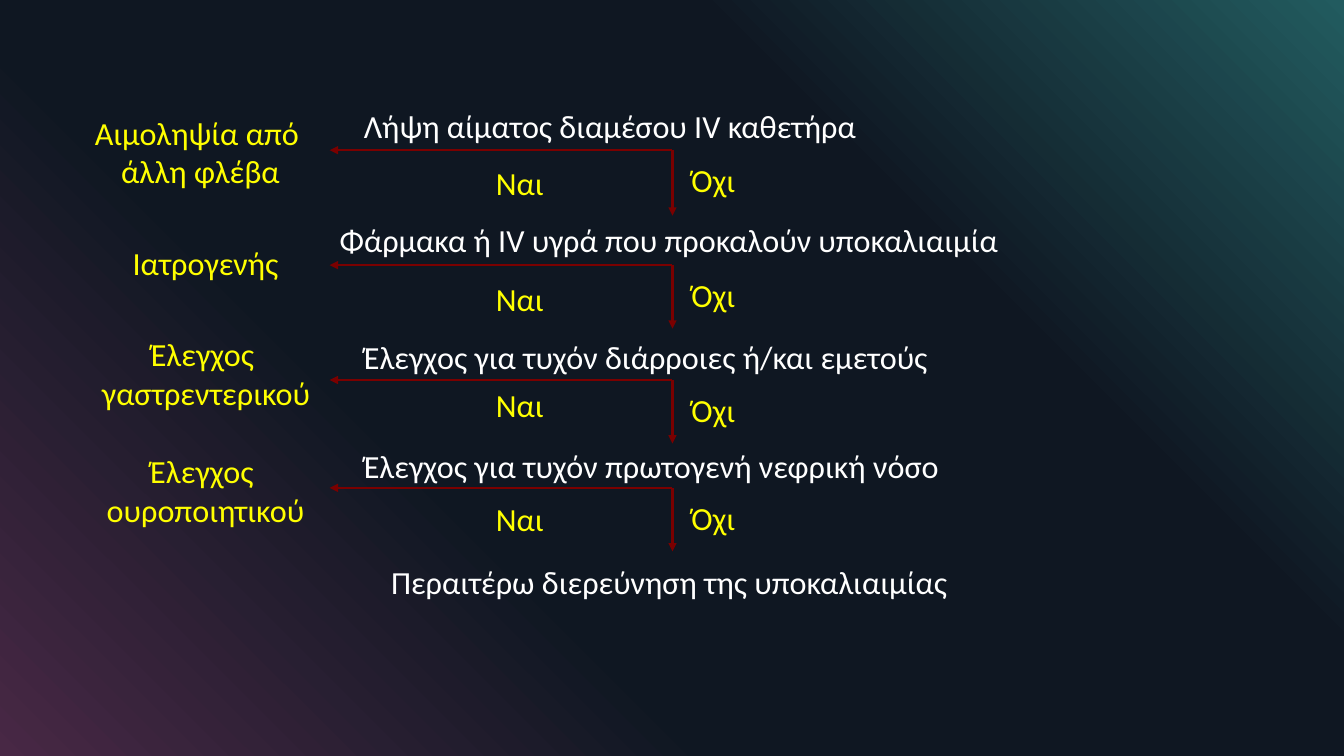
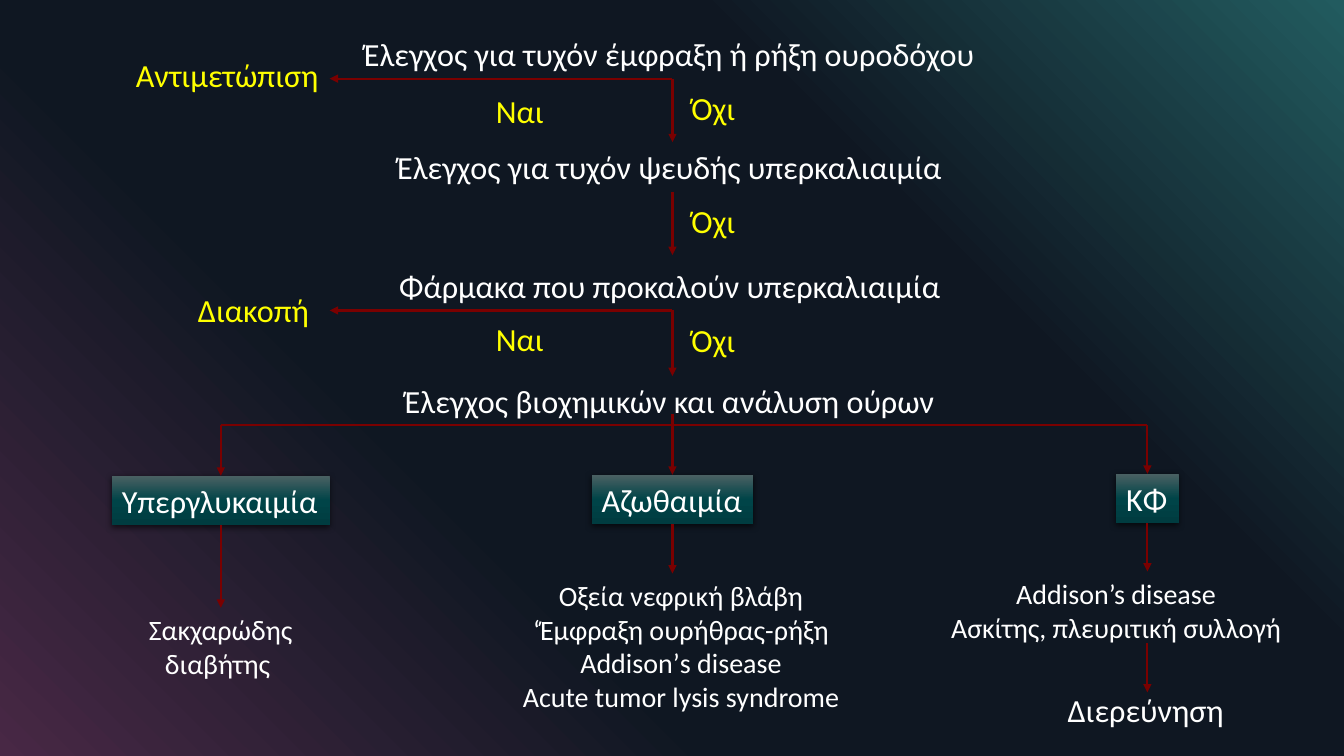
from dataclasses import dataclass

import pptx
import pptx.dml.color
import pptx.enum.shapes
import pptx.enum.text
import pptx.oxml
import pptx.oxml.ns
import pptx.util
from lxml import etree

Inches = pptx.util.Inches
qn = pptx.oxml.ns.qn


@dataclass(frozen=True)
class Theme:
    font: str = "Calibri"
    size: int = 23
    small: int = 20
    rule: float = 1.5
    white: str = "FFFFFF"
    yellow: str = "FFFF00"
    red: str = "7A0000"
    black: str = "000000"
    back: tuple = ((0, "482845"), (34, "0F1722"), (69, "0F1722"), (100, "225B5F"))
    teal: tuple = ((0, "4B6163"), (50, "004448"), (100, "003C40"))


THEME = Theme()
MID = 6.67
LEFT = 3.27
DROP = 0.63
NEAR = 0.03


def blend(fill, root, stops, angle):
    fill.gradient()
    fill.gradient_angle = angle
    group = root.find(".//" + qn("a:gsLst"))
    for old in list(group):
        group.remove(old)
    for place, tint in stops:
        stop = etree.SubElement(group, qn("a:gs"), pos=str(place * 1000))
        etree.SubElement(stop, qn("a:srgbClr"), val=tint)


class Deck:
    def __init__(self, theme):
        self.theme = theme
        self.show = pptx.Presentation()
        self.show.slide_width = Inches(13.33)
        self.show.slide_height = Inches(7.5)
        master = self.show.slide_master
        blend(master.background.fill, master.element, theme.back, 45)

    def page(self):
        self.slide = self.show.slides.add_slide(self.show.slide_layouts[6])
        self.boxes = []

    def letter(self, shape, text, size, tint, center):
        frame = shape.text_frame
        frame.text = text
        frame.word_wrap = False
        frame.auto_size = pptx.enum.text.MSO_AUTO_SIZE.SHAPE_TO_FIT_TEXT
        align = pptx.enum.text.PP_ALIGN
        for para in frame.paragraphs:
            para.alignment = align.CENTER if center else align.LEFT
            para.font.name = self.theme.font
            para.font.size = pptx.util.Pt(size)
            para.font.color.rgb = pptx.dml.color.RGBColor.from_string(tint)
        self.boxes.append(shape)

    def frame(self, text, left, top, width, size):
        lines = 1 + text.count("\n") + text.count("\v")
        height = round(0.1 + lines * size * 1.22 / 72, 2)
        return [Inches(n) for n in (left, top, width, height)]

    def label(self, text, left, top, width, tint=None, size=None, center=False):
        size = size or self.theme.size
        shape = self.slide.shapes.add_textbox(*self.frame(text, left, top, width, size))
        self.letter(shape, text, size, tint or self.theme.white, center)

    def middle(self, text, top, width):
        self.label(text, MID - width / 2, top, width)

    def answer(self, text, left, top, width):
        self.label(text, left, top, width, self.theme.yellow, center=True)

    def box(self, text, x, top, width):
        theme = self.theme
        shape = self.slide.shapes.add_shape(
            pptx.enum.shapes.MSO_SHAPE.RECTANGLE,
            *self.frame(text, x - width / 2, top, width, theme.size))
        blend(shape.fill, shape.element, theme.teal, 270)
        shape.line.fill.background()
        shape.shadow.inherit = False
        effects = shape.element.find(".//" + qn("a:effectLst"))
        shade = etree.SubElement(effects, qn("a:outerShdw"), blurRad="57150",
                                 dist="19050", dir="5400000", algn="ctr", rotWithShape="0")
        tint = etree.SubElement(shade, qn("a:srgbClr"), val=theme.black)
        etree.SubElement(tint, qn("a:alpha"), val="63000")
        self.letter(shape, text, theme.size, theme.white, False)

    def attach(self, link, x, y):
        for box in self.boxes:
            if abs(box.left + box.width / 2 - Inches(x)) > Inches(NEAR):
                continue
            for side, edge in ((0, box.top), (2, box.top + box.height)):
                if abs(edge - Inches(y)) <= Inches(NEAR):
                    link(box, side)
                    return

    def line(self, x1, y1, x2, y2, head=True):
        wire = self.slide.shapes.add_connector(
            pptx.enum.shapes.MSO_CONNECTOR.STRAIGHT,
            *[Inches(n) for n in (x1, y1, x2, y2)])
        wire.line.color.rgb = pptx.dml.color.RGBColor.from_string(self.theme.red)
        wire.line.width = pptx.util.Pt(self.theme.rule)
        edge = wire.element.find(".//" + qn("a:ln"))
        if head:
            etree.SubElement(edge, qn("a:tailEnd"), type="triangle")
        etree.SubElement(edge.getparent(), qn("a:effectLst"))
        self.attach(wire.begin_connect, x1, y1)
        self.attach(wire.end_connect, x2, y2)

    def fork(self, y, yes=None):
        self.line(MID, y, MID, y + DROP)
        self.label("Όχι", 6.76, y + 0.05, 0.64, self.theme.yellow)
        if yes:
            self.line(MID, y, LEFT, y)
            self.label("Ναι", 4.82, yes, 0.69, self.theme.yellow)


def low(deck):
    deck.page()
    deck.label("Λήψη αίματος διαμέσου IV καθετήρα", 3.51, 1.01, 5.2)
    deck.middle("Φάρμακα ή IV υγρά που προκαλούν υποκαλιαιμία", 2.14, 6.8)
    deck.label("Έλεγχος για τυχόν διάρροιες ή/και εμετούς", 3.51, 3.3, 5.92)
    deck.label("Έλεγχος για τυχόν πρωτογενή νεφρική νόσο", 3.51, 4.38, 5.97)
    deck.middle("Περαιτέρω διερεύνηση της υποκαλιαιμίας", 5.53, 5.78)
    deck.answer("Αιμοληψία από \vάλλη φλέβα", 0.83, 1.07, 2.32)
    deck.answer("Ιατρογενής", 1.21, 2.36, 1.66)
    deck.answer("Έλεγχος \vγαστρεντερικού", 0.9, 3.27, 2.29)
    deck.answer("Έλεγχος \vουροποιητικού", 0.95, 4.43, 2.18)
    for y, yes in ((1.49, 1.57), (2.63, 2.72), (3.77, 3.77), (4.84, 4.9)):
        deck.fork(y, yes)


def high(deck):
    small = deck.theme.small
    deck.page()
    deck.middle("Έλεγχος για τυχόν έμφραξη ή ρήξη ουροδόχου", 0.29, 6.32)
    deck.middle("Έλεγχος για τυχόν ψευδής υπερκαλιαιμία", 1.41, 5.66)
    deck.middle("Φάρμακα που προκαλούν υπερκαλιαιμία", 2.59, 5.62)
    deck.middle("Έλεγχος βιοχημικών και ανάλυση ούρων", 3.73, 5.51)
    deck.answer("Αντιμετώπιση", 1.24, 0.5, 2.03)
    deck.answer("Διακοπή", 1.86, 2.83, 1.31)
    deck.label("Σακχαρώδης\vδιαβήτης ", 1.37, 6.03, 1.64, size=small, center=True)
    deck.label("Οξεία νεφρική βλάβη\n‘Έμφραξη ουρήθρας-ρήξη\vAddison’s disease\n"
               "Acute tumor lysis syndrome", 5.07, 5.69, 3.37, size=small, center=True)
    deck.label("Addison’s disease\nΑσκίτης, πλευριτική συλλογή",
               9.32, 5.67, 3.5, size=small, center=True)
    deck.label("Διερεύνηση", 10.49, 6.8, 1.77)
    for y, yes in ((0.78, 0.86), (1.9, None), (3.08, 3.12)):
        deck.fork(y, yes)
    bar = 4.22
    for text, x, top, width, start, end in (
            ("Υπεργλυκαιμία", 2.19, 4.72, 2.16, bar, 6.03),
            ("Αζωθαιμία", MID, 4.71, 1.6, 4.11, 5.69),
            ("ΚΦ", 11.38, 4.7, 0.62, bar, 5.67)):
        deck.box(text, x, top, width)
        if x != MID:
            deck.line(MID, bar, x, bar, head=False)
        deck.line(x, start, x, top)
        deck.line(x, top + 0.49, x, end)
    deck.line(11.38, 6.38, 11.38, 6.87)


def main():
    deck = Deck(THEME)
    low(deck)
    high(deck)
    deck.show.save("out.pptx")


if __name__ == "__main__":
    main()
